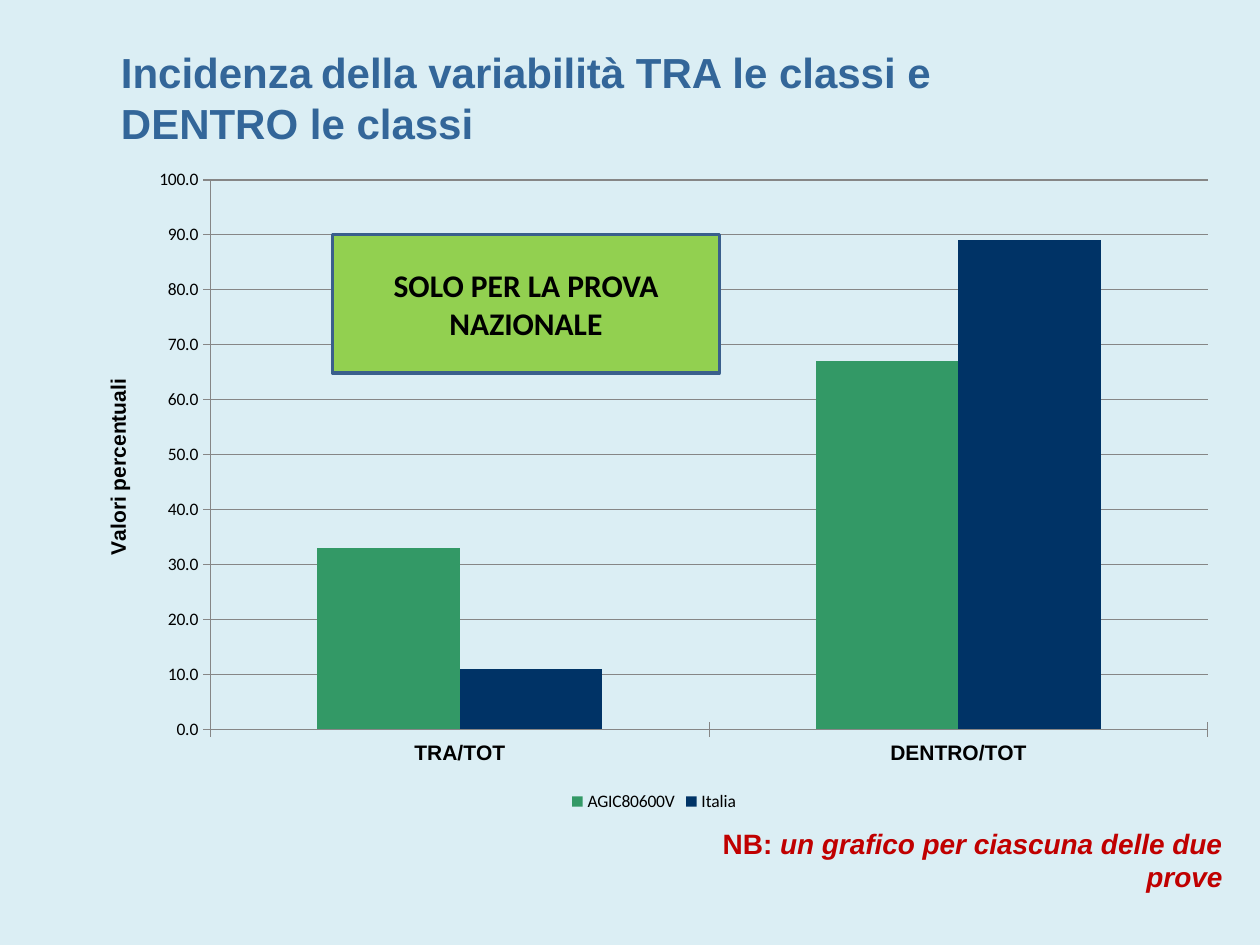
from lxml import etree
from pptx import Presentation
from pptx.chart.data import CategoryChartData
from pptx.dml.color import RGBColor
from pptx.enum.chart import XL_CHART_TYPE, XL_LEGEND_POSITION, XL_TICK_MARK
from pptx.enum.shapes import MSO_SHAPE
from pptx.enum.text import MSO_ANCHOR, PP_ALIGN
from pptx.oxml.ns import qn
from pptx.util import Inches, Pt

COLUMN, BOTTOM = XL_CHART_TYPE.COLUMN_CLUSTERED, XL_LEGEND_POSITION.BOTTOM
CROSS, RECT = XL_TICK_MARK.CROSS, MSO_SHAPE.RECTANGLE
TOP, MIDDLE = MSO_ANCHOR.TOP, MSO_ANCHOR.MIDDLE
LEFT, CENTER, RIGHT = PP_ALIGN.LEFT, PP_ALIGN.CENTER, PP_ALIGN.RIGHT

# Content
COLORS = dict(bg="DBEEF4", title="336699", text="000000", note="C00000",
              box="92D050", edge="3A5F8C", grid="868686")
TITLE = [("Incidenza", {}), (" ", dict(size=18, bold=False)),
         ("della variabilità TRA le classi e DENTRO le classi", {})]
CALLOUT = [("SOLO PER LA PROVA NAZIONALE", {})]
NOTE = [("NB: ", {}), ("un grafico per ciascuna delle due prove", dict(italic=True))]
AXIS_TITLE = "Valori percentuali"
CATEGORIES = ["TRA/TOT", "DENTRO/TOT"]
SERIES = [("AGIC80600V", (33, 67), "339966"), ("Italia", (11, 89), "003366")]

# Places in inches: left, top, width, height
PLACES = dict(title=(0.86, 0.32, 8.12, 0.91), chart=(0.62, 1.25, 9.14, 5.23),
              callout=(2.64, 1.86, 3.07, 1.1), note=(5.31, 6.51, 4.49, 0.37))
PLOT = dict(x=0.115, y=0.034, w=0.866, h=0.834)  # shares of the chart


def rgb(name):
    return RGBColor.from_string(COLORS.get(name, name))


def place(name):
    return [Inches(v) for v in PLACES[name]]


def set_font(font, size=12, name="Arial", color="text", bold=True, italic=False):
    font.size, font.name, font.bold, font.italic = Pt(size), name, bold, italic
    font.color.rgb = rgb(color)


def write(tf, runs, align=LEFT, anchor=TOP, **fmt):
    tf.word_wrap, tf.vertical_anchor = True, anchor
    p = tf.paragraphs[0]
    p.alignment = align
    for text, extra in runs:
        r = p.add_run()
        r.text = text
        set_font(r.font, **{**fmt, **extra})


prs = Presentation()
prs.slide_width, prs.slide_height = Inches(10), Inches(7.5)
s = prs.slides.add_slide(prs.slide_layouts[5])
s.background.fill.solid()
s.background.fill.fore_color.rgb = rgb("bg")

# Title
title = s.shapes.title
title.left, title.top, title.width, title.height = place("title")
write(title.text_frame, TITLE, size=24, color="title")

# Chart
data = CategoryChartData(number_format="0.0")
data.categories = CATEGORIES
for name, values, _ in SERIES:
    data.add_series(name, values)
chart = s.shapes.add_chart(COLUMN, *place("chart"), data).chart
set_font(chart.font, size=10, name="Calibri", bold=False)
chart.has_title = False
chart.has_legend = True
chart.legend.position, chart.legend.include_in_layout = BOTTOM, False
plot = chart.plots[0]
plot.gap_width, plot.overlap, plot.vary_by_categories = 150, 0, False
for series, (_, _, color) in zip(plot.series, SERIES):
    series.format.fill.solid()
    series.format.fill.fore_color.rgb = rgb(color)

# Axes
cat, val = chart.category_axis, chart.value_axis
for axis in (cat, val):
    axis.major_tick_mark = CROSS
    axis.format.line.color.rgb = rgb("grid")
set_font(cat.tick_labels.font)
val.minimum_scale, val.maximum_scale, val.major_unit = 0, 100, 10
val.major_gridlines.format.line.color.rgb = rgb("grid")
val.tick_labels.number_format = "0.0"
val.tick_labels.number_format_is_linked = False
r = val.axis_title.text_frame.paragraphs[0].add_run()
r.text = AXIS_TITLE
set_font(r.font)

# Fixed plot area
area = chart._chartSpace.chart.plotArea
for old in area.findall(qn("c:layout")):
    area.remove(old)
layout = etree.Element(qn("c:layout"))
area.insert(0, layout)
manual = etree.SubElement(layout, qn("c:manualLayout"))
for tag, value in [("layoutTarget", "inner"), ("xMode", "edge"), ("yMode", "edge"),
                   *PLOT.items()]:
    etree.SubElement(manual, qn(f"c:{tag}"), val=str(value))

# Callout
box = s.shapes.add_shape(RECT, *place("callout"))
box.shadow.inherit = False
box.fill.solid()
box.fill.fore_color.rgb = rgb("box")
box.line.color.rgb, box.line.width = rgb("edge"), Pt(2)
write(box.text_frame, CALLOUT, align=CENTER, anchor=MIDDLE, size=18, name="Calibri")

# Note
note = s.shapes.add_textbox(*place("note"))
write(note.text_frame, NOTE, align=RIGHT, size=16, color="note")

prs.save("out.pptx")
